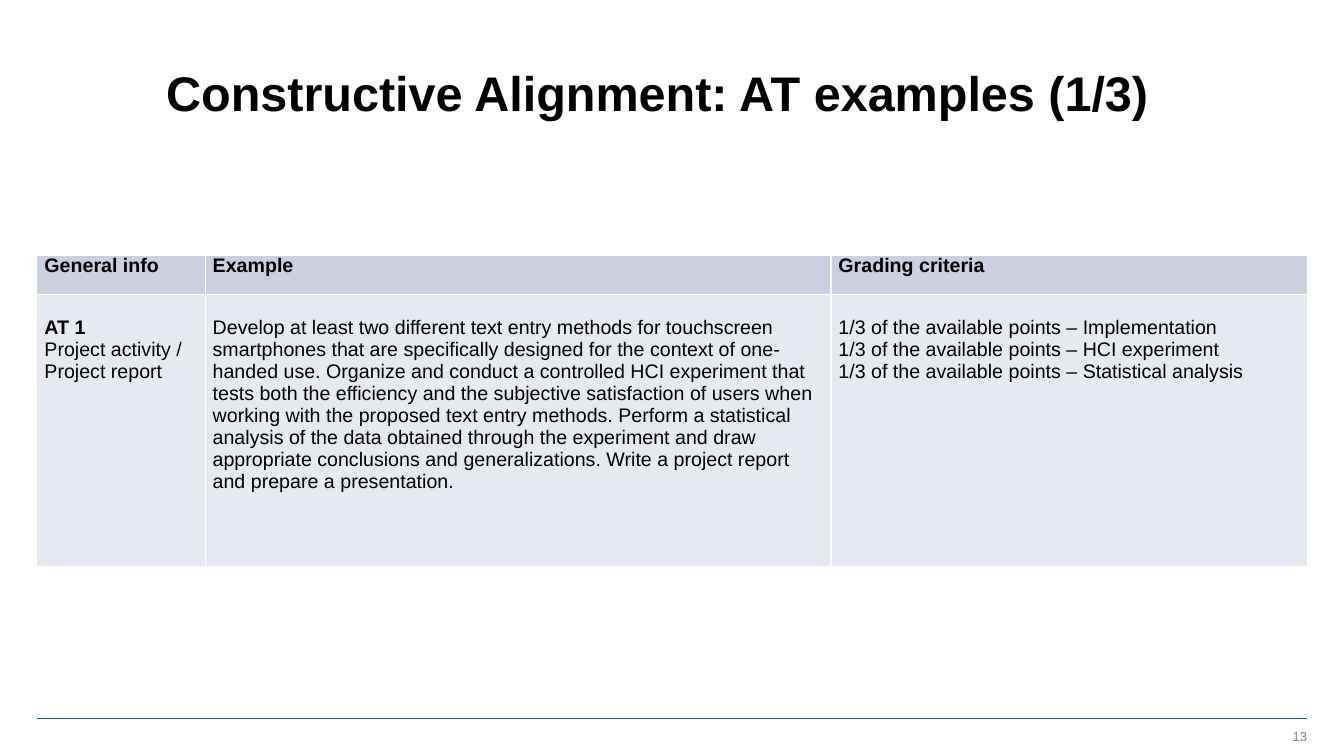
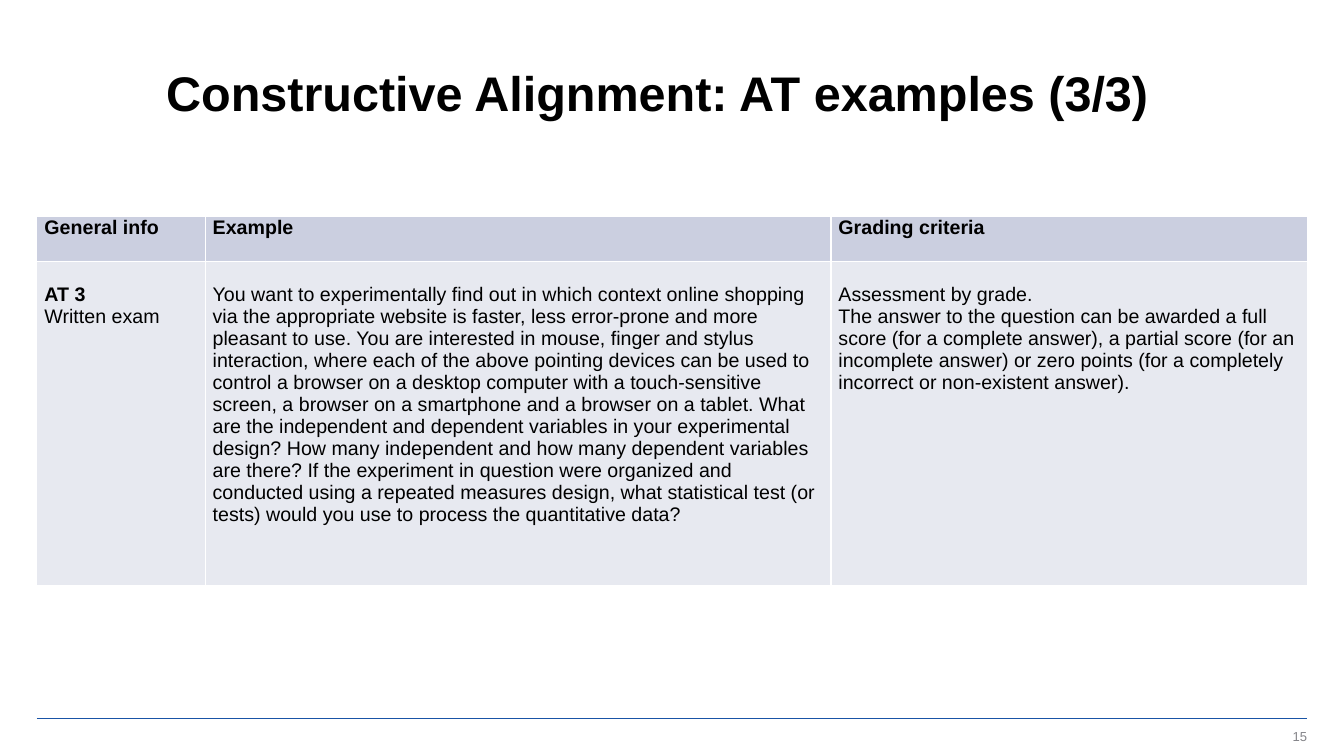
from pptx import Presentation
from pptx.dml.color import RGBColor
from pptx.enum.shapes import MSO_CONNECTOR as Connector
from pptx.enum.text import MSO_ANCHOR as Anchor, PP_ALIGN as Align
from pptx.oxml.ns import qn
from pptx.util import Cm, Pt
from lxml.etree import SubElement

# Shared style
COLORS = {
    "text": "000000",
    "rule": "1954A6",
    "number": "848489",
    "header": "CBCFE0",
    "body": "E7E9F0",
    "border": "FFFFFF",
}
FONT = "Arial"
LEFT, RIGHT = 0.93, 32.94
COLUMN_WIDTHS = [4.24, 15.77, 12.01]
HEADERS = ["General info", "Example", "Grading criteria"]
BODY_TOP_MARGIN = 0.55

# Slide content: one list of lines per body cell
SLIDES = [
    {
        "part": "1/3", "number": 13, "top": 6.43, "rows": [0.99, 6.86],
        "cells": [
            ["AT 1", "Project activity / Project report"],
            ["Develop at least two different text entry methods for touchscreen "
             "smartphones that are specifically designed for the context of "
             "one-handed use. Organize and conduct a controlled HCI experiment "
             "that tests both the efficiency and the subjective satisfaction of "
             "users when working with the proposed text entry methods. Perform a "
             "statistical analysis of the data obtained through the experiment "
             "and draw appropriate conclusions and generalizations. Write a "
             "project report and prepare a presentation."],
            ["1/3 of the available points – Implementation",
             "1/3 of the available points – HCI experiment",
             "1/3 of the available points – Statistical analysis"],
        ],
    },
    {
        "part": "3/3", "number": 15, "top": 5.46, "rows": [1.14, 8.15],
        "cells": [
            ["AT 3", "Written exam"],
            ["You want to experimentally find out in which context online "
             "shopping via the appropriate website is faster, less error-prone "
             "and more pleasant to use. You are interested in mouse, finger and "
             "stylus interaction, where each of the above pointing devices can "
             "be used to control a browser on a desktop computer with a "
             "touch-sensitive screen, a browser on a smartphone and a browser on "
             "a tablet. What are the independent and dependent variables in your "
             "experimental design? How many independent and how many dependent "
             "variables are there? If the experiment in question were organized "
             "and conducted using a repeated measures design, what statistical "
             "test (or tests) would you use to process the quantitative data?"],
            ["Assessment by grade.",
             "The answer to the question can be awarded a full score (for a "
             "complete answer), a partial score (for an incomplete answer) or "
             "zero points (for a completely incorrect or non-existent answer)."],
        ],
    },
]


def color(name):
    return RGBColor.from_string(COLORS[name])


def style_text(para, size, bold=False, color_name="text"):
    for span in para.runs:
        span.font.name = FONT
        span.font.size = Pt(size)
        span.font.bold = bold
        span.font.color.rgb = color(color_name)


def add_text(page, text, place, margins, size, **style):
    box = page.shapes.add_textbox(*map(Cm, place))
    frame = box.text_frame
    frame.word_wrap = True
    frame.vertical_anchor = Anchor.MIDDLE
    frame.margin_left = frame.margin_right = Cm(margins[0])
    frame.margin_top = frame.margin_bottom = Cm(margins[1])
    frame.text = text
    para = frame.paragraphs[0]
    style_text(para, size, **style)
    return para


def add_title(page, text):
    para = add_text(page, text, (3.94, 0.94, 27.97, 2.49), (0.25, 0.13), 34.7, bold=True)
    para.line_spacing = 1.18


def add_footer(page, number):
    rule = page.shapes.add_connector(
        Connector.STRAIGHT, Cm(LEFT), Cm(18.11), Cm(RIGHT), Cm(18.11))
    rule.line.color.rgb = color("rule")
    rule.line.width = Pt(1)
    SubElement(rule.element.spPr, qn("a:effectLst"))
    para = add_text(page, str(number), (RIGHT - 7.62, 18.34, 7.62, 0.43), (0, 0), 9.3,
                    color_name="number")
    para.alignment = Align.RIGHT


def add_borders(cell):
    # Border lines must come before the fill in the cell properties
    properties = cell._tc.get_or_add_tcPr()
    for index, side in enumerate(("lnL", "lnR", "lnT", "lnB")):
        line = SubElement(properties, qn(f"a:{side}"), w=str(Pt(1)))
        fill = SubElement(line, qn("a:solidFill"))
        SubElement(fill, qn("a:srgbClr"), val=COLORS["border"])
        properties.insert(index, line)


def fill_cell(cell, lines, fill_name, bold_first, top_margin=0):
    cell.fill.solid()
    cell.fill.fore_color.rgb = color(fill_name)
    cell.margin_left = cell.margin_right = Cm(0.19)
    cell.margin_top, cell.margin_bottom = Cm(top_margin), 0
    cell.text_frame.text = "\n".join(lines)
    for index, para in enumerate(cell.text_frame.paragraphs):
        style_text(para, 14, bold=bold_first and index == 0)
    add_borders(cell)


def add_criteria_table(page, top, row_heights, body_cells):
    frame = page.shapes.add_table(
        2, len(HEADERS), Cm(LEFT), Cm(top), Cm(sum(COLUMN_WIDTHS)), Cm(sum(row_heights)))
    table = frame.table
    table.first_row = table.horz_banding = False
    for row, height in zip(table.rows, row_heights):
        row.height = Cm(height)
    for index, (width, header, lines) in enumerate(zip(COLUMN_WIDTHS, HEADERS, body_cells)):
        table.columns[index].width = Cm(width)
        fill_cell(table.cell(0, index), [header], "header", True)
        fill_cell(table.cell(1, index), lines, "body", index == 0, BODY_TOP_MARGIN)


def main():
    deck = Presentation()
    deck.slide_width, deck.slide_height = Cm(33.87), Cm(19.05)
    for content in SLIDES:
        page = deck.slides.add_slide(deck.slide_layouts[6])
        add_title(page, f"Constructive Alignment: AT examples ({content['part']})")
        add_criteria_table(page, content["top"], content["rows"], content["cells"])
        add_footer(page, content["number"])
    deck.save("out.pptx")


if __name__ == "__main__":
    main()
